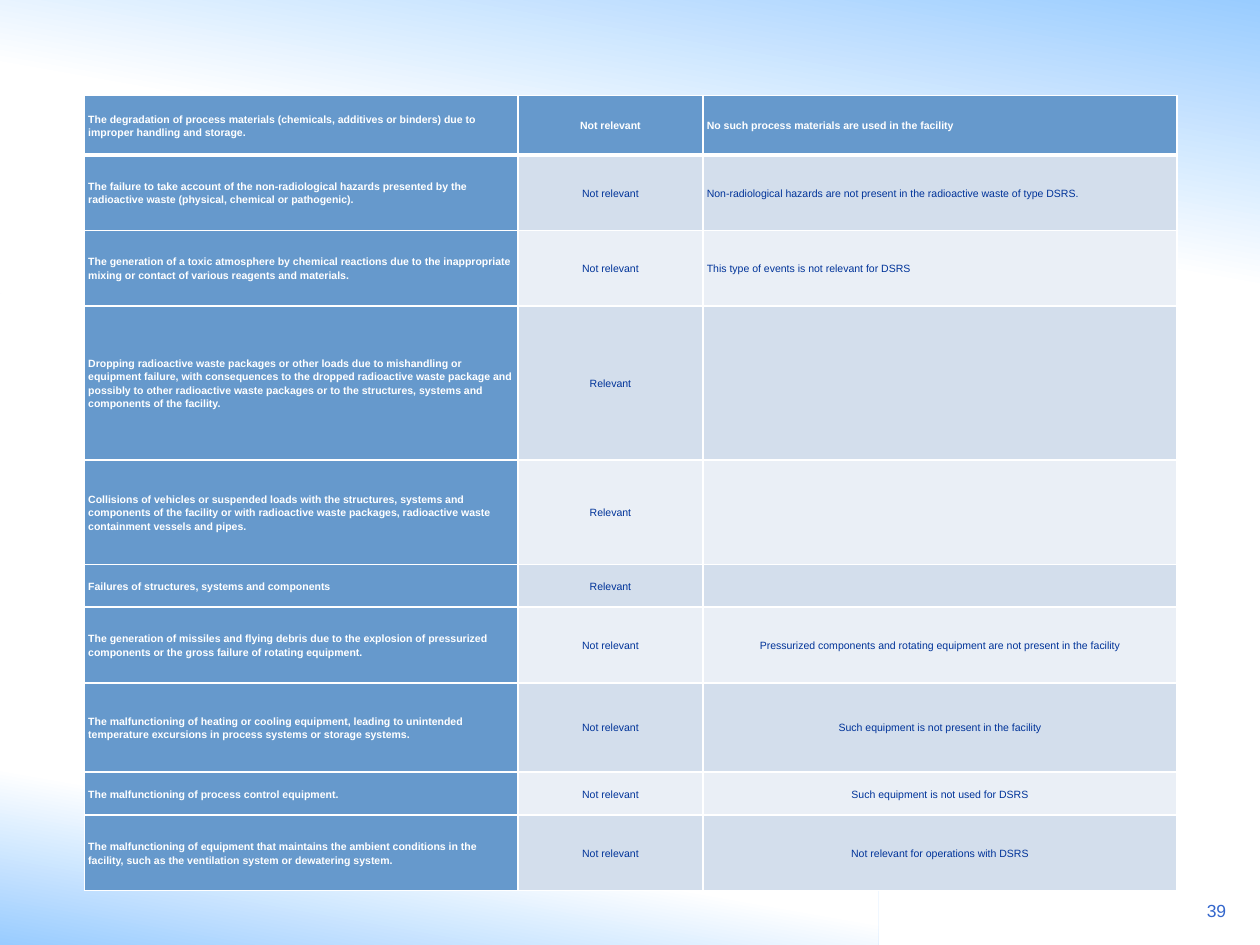
from lxml.etree import SubElement
from pptx import Presentation
from pptx.dml.color import RGBColor
from pptx.enum.shapes import MSO_SHAPE
from pptx.enum.text import MSO_ANCHOR, PP_ALIGN
from pptx.oxml.ns import qn
from pptx.util import Inches, Pt

COLORS = {
    "sky": "99CCFF", "white": "FFFFFF", "header": "6699CC", "body": "003399",
    "band_dark": "D3DEEC", "band_light": "EAEFF6", "page": "3366CC",
}
LEFT, CENTER, RIGHT = PP_ALIGN.LEFT, PP_ALIGN.CENTER, PP_ALIGN.RIGHT
COLUMN_WIDTHS = [3.44, 1.47, 3.76]

EVENTS = [
    (0.47, "The degradation of process materials (chemicals, additives or binders) due to improper handling and storage.",
     "Not relevant", "No such process materials are used in the facility", LEFT),
    (0.6, "The failure to take account of the non-radiological hazards presented by the radioactive waste (physical, chemical or pathogenic).",
     "Not relevant", "Non-radiological hazards are not present in the radioactive waste of type DSRS.", LEFT),
    (0.6, "The generation of a toxic atmosphere by chemical reactions due to the inappropriate mixing or contact of various reagents and materials.",
     "Not relevant", "This type of events is not relevant for DSRS", LEFT),
    (1.22, "Dropping radioactive waste packages or other loads due to mishandling or equipment failure, with consequences to the dropped radioactive waste package and possibly to other radioactive waste packages or to the structures, systems and components of the facility.",
     "Relevant", "", LEFT),
    (0.83, "Collisions of vehicles or suspended loads with the structures, systems and components of the facility or with radioactive waste packages, radioactive waste containment vessels and pipes.",
     "Relevant", "", LEFT),
    (0.34, "Failures of structures, systems and components", "Relevant", "", LEFT),
    (0.6, "The generation of missiles and flying debris due to the explosion of pressurized components or the gross failure of rotating equipment.",
     "Not relevant", "Pressurized components and rotating equipment are not present in the facility", CENTER),
    (0.71, "The malfunctioning of heating or cooling equipment, leading to unintended temperature excursions in process systems or storage systems.",
     "Not relevant", "Such equipment is not present in the facility", CENTER),
    (0.34, "The malfunctioning of process control equipment.",
     "Not relevant", "Such equipment is not used for DSRS", CENTER),
    (0.6, "The malfunctioning of equipment that maintains the ambient conditions in the facility, such as the ventilation system or dewatering system.",
     "Not relevant", "Not relevant for operations with DSRS", CENTER),
]


def rgb(name):
    return RGBColor.from_string(COLORS[name])


def write(frame, text, *, size, color, bold=False, align=LEFT, spacing=None, after=None):
    frame.word_wrap = True
    paragraph = frame.paragraphs[0]
    paragraph.alignment = align
    paragraph.line_spacing = spacing
    paragraph.space_after = after
    if not text:
        SubElement(paragraph._p, qn("a:endParaRPr"), sz=str(size * 100))
        return
    run = paragraph.add_run()
    run.text = text
    font = run.font
    font.name, font.size, font.bold = "Arial", Pt(size), bold
    font.color.rgb = rgb(color)


class EventSlide:
    """Holds the slide and the style of its event screening table."""

    def __init__(self, slide):
        self.slide = slide
        self.cell_inset = Inches(0.03)
        self.cell_text = {"size": 6, "spacing": 1.15, "after": Pt(10)}

    def glow(self, left, top, width, height, *, fade_end, angle):
        panel = self.slide.shapes.add_shape(
            MSO_SHAPE.RECTANGLE, Inches(left), Inches(top), Inches(width), Inches(height))
        panel.shadow.inherit = False
        panel.line.fill.background()
        panel.fill.gradient()
        panel.fill.gradient_angle = angle
        fade = (("sky", 0), ("white", fade_end))
        for stop, (color, position) in zip(panel.fill.gradient_stops, fade):
            stop.color.rgb = rgb(color)
            stop.position = position

    def page_number(self, number):
        page = self.slide.shapes.add_textbox(
            Inches(9.27), Inches(7.09), Inches(0.56), Inches(0.32))
        write(page.text_frame, number, size=10, color="page", align=RIGHT)

    def border(self, cell, widths):
        properties = cell._tc.get_or_add_tcPr()
        for side, width in widths.items():
            line = SubElement(properties, qn(f"a:ln{side}"), w=str(Pt(width)))
            fill = SubElement(line, qn("a:solidFill"))
            SubElement(fill, qn("a:srgbClr"), val=COLORS["white"])

    def cell(self, cell, text, *, row, is_header, align):
        self.border(cell, {"L": 1, "R": 1, "T": 3 if row == 1 else 1, "B": 3 if row == 0 else 1})
        band = "band_dark" if row % 2 else "band_light"
        cell.fill.solid()
        cell.fill.fore_color.rgb = rgb("header" if is_header else band)
        cell.vertical_anchor = MSO_ANCHOR.MIDDLE
        cell.margin_left = cell.margin_right = self.cell_inset
        cell.margin_top = cell.margin_bottom = self.cell_inset
        write(cell.text_frame, text, color="white" if is_header else "body",
              bold=is_header, align=align, **self.cell_text)

    def event_table(self, events):
        table = self.slide.shapes.add_table(
            len(events), len(COLUMN_WIDTHS), Inches(0.67), Inches(0.76),
            Inches(sum(COLUMN_WIDTHS)), Inches(sum(event[0] for event in events))).table
        table.first_col = True
        for column, width in zip(table.columns, COLUMN_WIDTHS):
            column.width = Inches(width)
        for row, (height, event, relevance, reason, reason_align) in enumerate(events):
            table.rows[row].height = Inches(height)
            entries = ((event, LEFT), (relevance, CENTER), (reason, reason_align))
            for column, (text, align) in enumerate(entries):
                self.cell(table.cell(row, column), text, row=row,
                          is_header=row == 0 or column == 0, align=align)


def main():
    deck = Presentation()
    deck.slide_width, deck.slide_height = Inches(10), Inches(7.5)
    page = EventSlide(deck.slides.add_slide(deck.slide_layouts[6]))
    page.glow(0, 5.8, 6.97, 1.7, fade_end=0.48, angle=80)
    page.glow(0, 0, 10, 2.33, fade_end=0.56, angle=260)
    page.page_number("39")
    page.event_table(EVENTS)
    deck.save("out.pptx")


if __name__ == "__main__":
    main()
